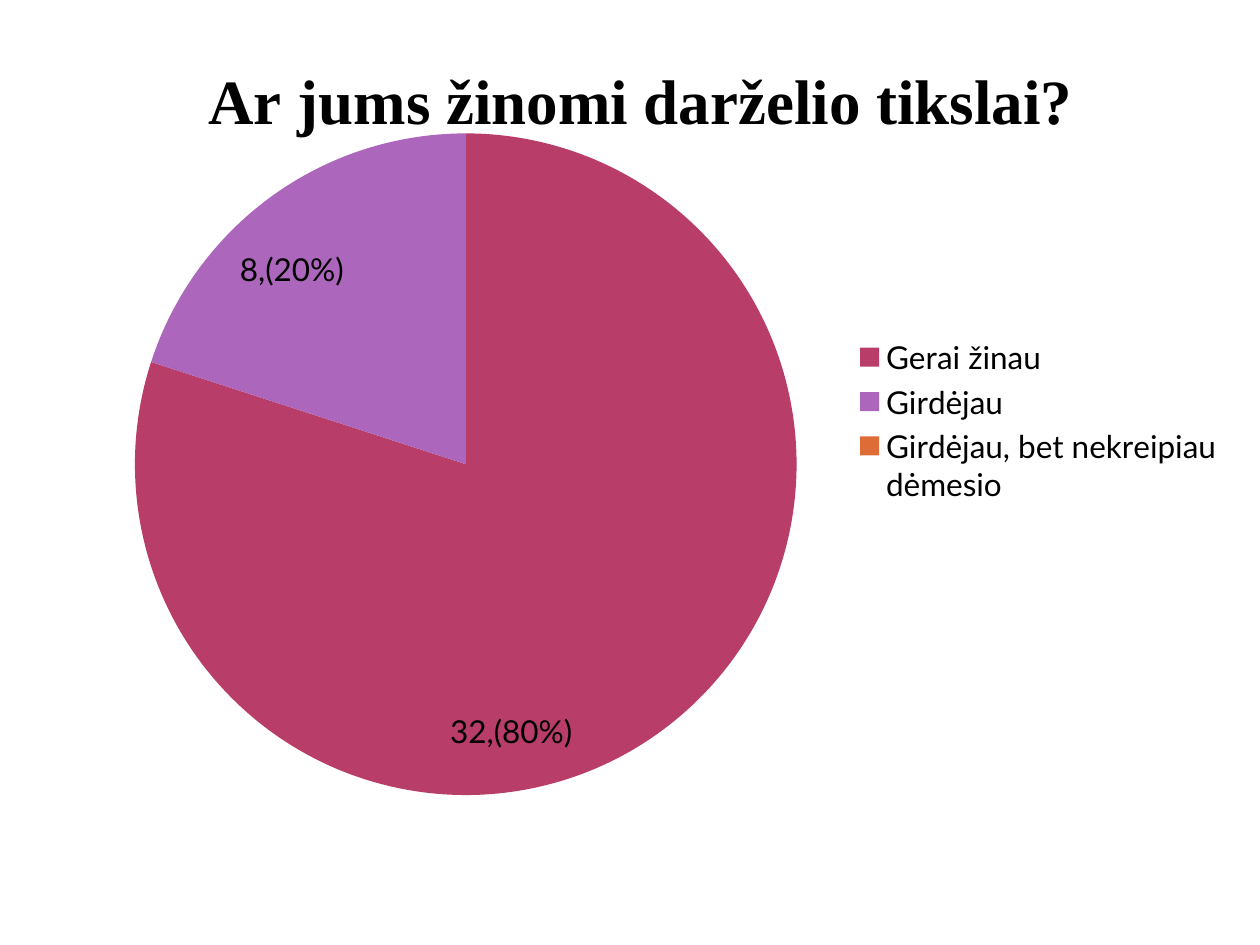
import pptx
import pptx.chart.data
import pptx.dml.color
import pptx.enum.chart
import pptx.oxml
import pptx.oxml.ns
import pptx.util

COLORS = {
    "text": "000000",
    "Gerai žinau": "B83D68",
    "Girdėjau": "AC66BB",
    "Girdėjau, bet nekreipiau dėmesio": "DE6C36",
}
QUESTION = "Ar jums žinomi darželio tikslai?"
# answer, votes, label, label shift as a share of the chart
ANSWERS = [
    ("Gerai žinau", 32, "32,(80%)", (-0.07, 0.03)),
    ("Girdėjau", 8, "8,(20%)", (-0.03, 0.06)),
    ("Girdėjau, bet nekreipiau dėmesio", 0, None, None),
]
# centimetres
CHART_WIDTH, CHART_HEIGHT = 24.05, 15.9
PIE_LEFT, PIE_TOP, PIE_DIAMETER = 1.83, 2.16, 13.34


def rgb(key):
    return pptx.dml.color.RGBColor.from_string(COLORS[key])


def style(font, size, name="Lato", bold=False):
    font.size = pptx.util.Pt(size)
    font.name = name
    font.bold = bold
    font.color.rgb = rgb("text")


def chart_xml(tag, content):
    return pptx.oxml.parse_xml(
        f'<c:{tag} {pptx.oxml.ns.nsdecls("c")}>{content}</c:{tag}>'
    )


def manual_layout(**settings):
    """Return a c:layout element holding the given settings in order."""
    items = "".join(f'<c:{key} val="{value}"/>' for key, value in settings.items())
    return chart_xml("layout", f"<c:manualLayout>{items}</c:manualLayout>")


def add_pie(slide):
    votes = pptx.chart.data.CategoryChartData()
    votes.categories = [answer for answer, *_ in ANSWERS]
    votes.add_series(QUESTION, [count for _, count, *_ in ANSWERS])
    pie = slide.shapes.add_chart(
        pptx.enum.chart.XL_CHART_TYPE.PIE,
        pptx.util.Cm(0.89), pptx.util.Cm(0.53),
        pptx.util.Cm(CHART_WIDTH), pptx.util.Cm(CHART_HEIGHT), votes,
    ).chart
    style(pie.font, 18)
    pie.plots[0].vary_by_categories = True
    return pie


def add_title(pie):
    run = pie.chart_title.text_frame.paragraphs[0].add_run()
    run.text = QUESTION
    style(run.font, 36, "Times New Roman", bold=True)


def add_legend(pie):
    pie.has_legend = True
    pie.legend.position = pptx.enum.chart.XL_LEGEND_POSITION.RIGHT
    pie.legend.include_in_layout = False
    style(pie.legend.font, 18)


def place_plot(pie):
    plot_area = pie.plots[0]._element.getparent()
    for automatic in plot_area.findall(pptx.oxml.ns.qn("c:layout")):
        plot_area.remove(automatic)
    plot_area.insert(0, manual_layout(
        layoutTarget="inner", xMode="edge", yMode="edge",
        x=PIE_LEFT / CHART_WIDTH, y=PIE_TOP / CHART_HEIGHT,
        w=PIE_DIAMETER / CHART_WIDTH, h=PIE_DIAMETER / CHART_HEIGHT,
    ))


def add_label(point, labels, text, shift):
    label = point.data_label
    run = label.text_frame.paragraphs[0].add_run()
    run.text = text
    style(run.font, 18)
    label.position = pptx.enum.chart.XL_LABEL_POSITION.INSIDE_END
    index = labels._element.dLbl_lst[-1].find(pptx.oxml.ns.qn("c:idx"))
    index.addnext(manual_layout(x=shift[0], y=shift[1]))


def hide_label(labels, number):
    labels._element.dLbl_lst[-1].addnext(
        chart_xml("dLbl", f'<c:idx val="{number}"/><c:delete val="1"/>')
    )


def format_slices(pie):
    series = pie.plots[0].series[0]
    labels = series.data_labels
    labels.show_value = True
    labels.show_percentage = True
    style(labels.font, 18)
    for number, (answer, _, text, shift) in enumerate(ANSWERS):
        point = series.points[number]
        point.format.fill.solid()
        point.format.fill.fore_color.rgb = rgb(answer)
        if text:
            add_label(point, labels, text, shift)
        else:
            hide_label(labels, number)


def main():
    deck = pptx.Presentation()
    deck.slide_width = pptx.util.Cm(25.4)
    deck.slide_height = pptx.util.Cm(19.05)
    slide = deck.slides.add_slide(deck.slide_layouts[6])
    pie = add_pie(slide)
    add_title(pie)
    add_legend(pie)
    place_plot(pie)
    format_slices(pie)
    deck.save("out.pptx")


if __name__ == "__main__":
    main()
